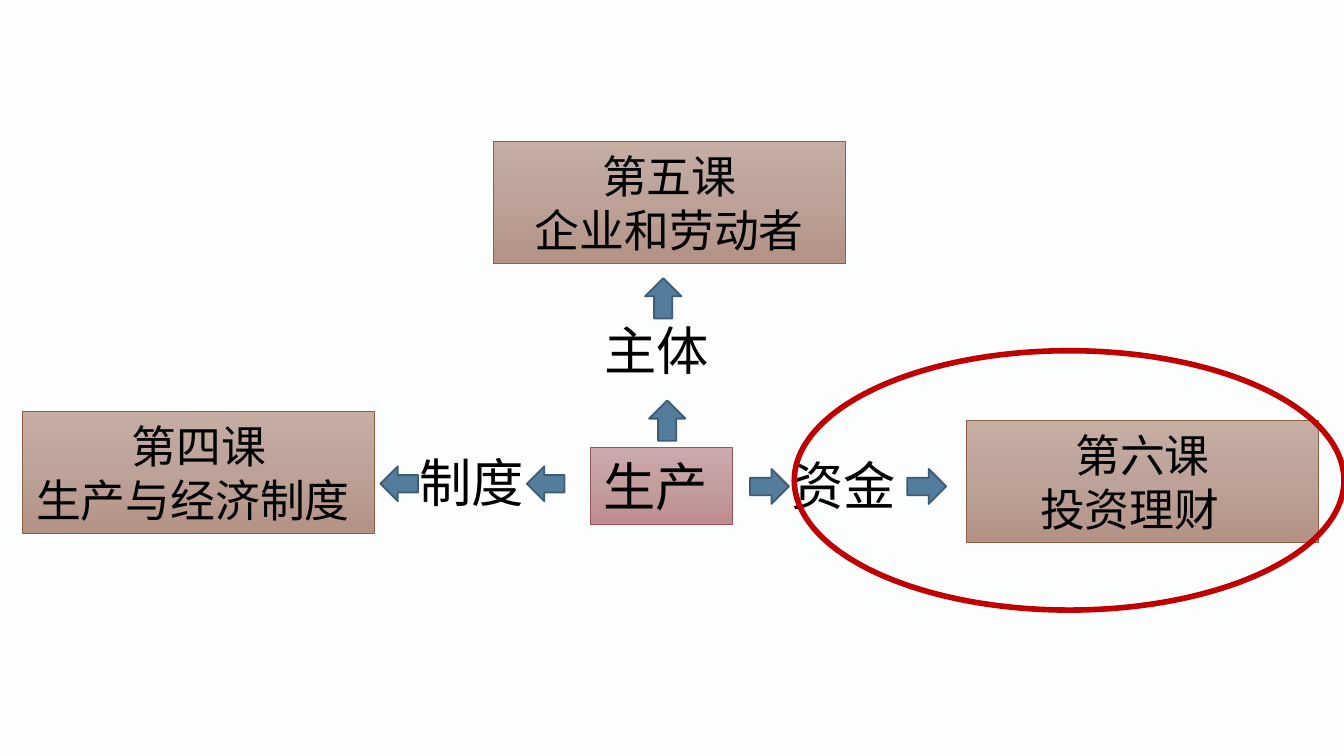
import copy
from dataclasses import dataclass

import pptx
import pptx.dml.color
import pptx.enum.shapes
import pptx.enum.text
import pptx.oxml.ns
import pptx.util
from pptx.util import Inches

SHAPES = pptx.enum.shapes.MSO_SHAPE
ALIGN = pptx.enum.text.PP_ALIGN
ANCHOR = pptx.enum.text.MSO_ANCHOR

SLIDE_WIDTH = 10
SLIDE_HEIGHT = SLIDE_WIDTH * 9 / 16
BOX_FONT, LABEL_FONT = "Arial", "Noto Sans CJK SC"
LESSON_SIZE = (2.62, 0.91)
LESSON_GRADIENT = ("C6AEA5", "BCA298", "B49286")
CENTER_GRADIENT = ("CCABAC", "C39E9F", "BD8D8F")


@dataclass
class Line:
    text: str
    align: ALIGN = ALIGN.CENTER
    indent: float = 0


@dataclass
class Box:
    left: float
    top: float
    lines: list[Line]
    size: tuple[float, float] = LESSON_SIZE
    points: int = 24
    gradient: tuple[str, str, str] = LESSON_GRADIENT
    border: str = "905E43"


@dataclass
class Label:
    left: float
    top: float
    width: float
    text: str


@dataclass
class Arrow:
    kind: SHAPES
    left: float
    top: float
    width: float
    height: float


BOXES = [
    Box(4.39, 3.33, [Line("生产", ALIGN.LEFT)], (1.06, 0.57), 28,
        CENTER_GRADIENT, "9D5458"),
    Box(0.17, 3.06, [Line("第四课"), Line("生产与经济制度", ALIGN.LEFT)]),
    Box(3.67, 1.05, [Line("第五课"), Line("企业和劳动者")]),
    Box(7.19, 3.13, [Line("第六课"), Line("投资理财", ALIGN.LEFT, 0.45)]),
]
LABELS = [
    Label(3.02, 3.3, 1.12, "制度"),
    Label(4.4, 2.32, 1.17, "主体"),
    Label(5.79, 3.32, 1.17, "资金"),
]
ARROWS = [
    *(Arrow(SHAPES.LEFT_ARROW, left, 3.47, 0.28, 0.26) for left in (3.92, 2.83)),
    *(Arrow(SHAPES.RIGHT_ARROW, left, 3.49, 0.29, 0.26) for left in (5.58, 6.75)),
    Arrow(SHAPES.UP_ARROW, 4.83, 2.98, 0.27, 0.3),
    Arrow(SHAPES.UP_ARROW, 4.8, 2.07, 0.27, 0.3),
]


def color(value: str) -> pptx.dml.color.RGBColor:
    return pptx.dml.color.RGBColor.from_string(value)


def add_outlined(page, kind: SHAPES, left: float, top: float, width: float,
                 height: float, border: str, points: float):
    shape = page.shapes.add_shape(
        kind, Inches(left), Inches(top), Inches(width), Inches(height))
    shape.shadow.inherit = False
    shape.line.color.rgb = color(border)
    shape.line.width = pptx.util.Pt(points)
    return shape


def fill_gradient(shape, colors: tuple[str, str, str]) -> None:
    shape.fill.gradient()
    shape.fill.gradient_angle = 270
    # The default gradient has two stops; add the middle one
    first = shape.element.spPr.find(".//" + pptx.oxml.ns.qn("a:gs"))
    first.addnext(copy.deepcopy(first))
    for stop, value, position in zip(shape.fill.gradient_stops, colors, (0, 0.5, 1)):
        stop.color.rgb = color(value)
        stop.position = position


def write(frame, lines: list[Line], points: int, font: str, anchor: ANCHOR) -> None:
    frame.word_wrap = True
    frame.vertical_anchor = anchor
    frame.auto_size = pptx.enum.text.MSO_AUTO_SIZE.SHAPE_TO_FIT_TEXT
    for index, line in enumerate(lines):
        para = frame.add_paragraph() if index else frame.paragraphs[0]
        para.text = line.text
        para.alignment = line.align
        para.font.name = font
        para.font.size = pptx.util.Pt(points)
        para.font.color.rgb = color("000000")
        if line.indent:
            para._p.get_or_add_pPr().set("marL", str(Inches(line.indent)))


def add_box(page, box: Box) -> None:
    shape = add_outlined(page, SHAPES.RECTANGLE, box.left, box.top, *box.size,
                         box.border, 0.5)
    fill_gradient(shape, box.gradient)
    write(shape.text_frame, box.lines, box.points, BOX_FONT, ANCHOR.MIDDLE)


def add_label(page, label: Label) -> None:
    shape = page.shapes.add_textbox(
        Inches(label.left), Inches(label.top), Inches(label.width), Inches(0.57))
    write(shape.text_frame, [Line(label.text, ALIGN.LEFT)], 28, LABEL_FONT, ANCHOR.TOP)


def add_arrow(page, arrow: Arrow) -> None:
    shape = add_outlined(page, arrow.kind, arrow.left, arrow.top, arrow.width,
                         arrow.height, "3E5C74", 1)
    shape.fill.solid()
    shape.fill.fore_color.rgb = color("547D9D")


def main() -> None:
    deck = pptx.Presentation()
    deck.slide_width, deck.slide_height = Inches(SLIDE_WIDTH), Inches(SLIDE_HEIGHT)
    page = deck.slides.add_slide(deck.slide_layouts[6])
    page.background.fill.solid()
    page.background.fill.fore_color.rgb = color("FCFDFD")

    # Lessons around the central topic
    for box in BOXES:
        add_box(page, box)
    for label in LABELS:
        add_label(page, label)
    for arrow in ARROWS:
        add_arrow(page, arrow)

    # Ring around the current lesson
    ring = add_outlined(page, SHAPES.OVAL, 5.91, 2.61, 4.09, 1.93, "C00000", 3)
    ring.fill.background()

    deck.save("out.pptx")


if __name__ == "__main__":
    main()
